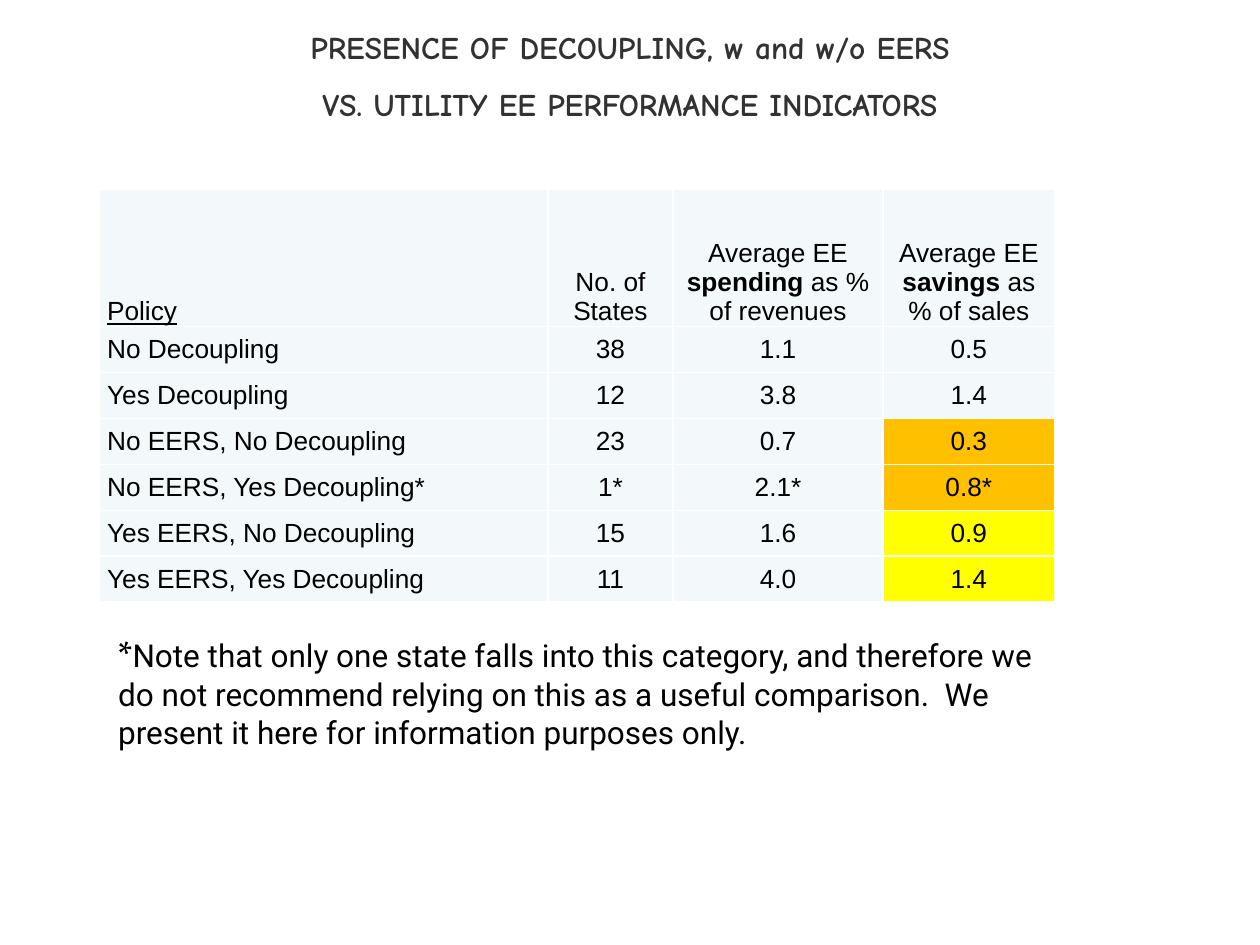
from dataclasses import dataclass

from lxml import etree
from pptx import Presentation
from pptx.dml.color import RGBColor
from pptx.enum.text import MSO_ANCHOR, MSO_AUTO_SIZE, PP_ALIGN
from pptx.oxml.ns import qn
from pptx.util import Inches, Pt

TOP, MIDDLE, BOTTOM = MSO_ANCHOR.TOP, MSO_ANCHOR.MIDDLE, MSO_ANCHOR.BOTTOM
LEFT, CENTER = PP_ALIGN.LEFT, PP_ALIGN.CENTER
NO_AUTOFIT = MSO_AUTO_SIZE.NONE
TITLE_ONLY = 5

COLORS = {
    "title": "323232",
    "text": "000000",
    "border": "FFFFFF",
    "cell": "F3F9FA",
    "without_eers": "FFC000",
    "with_eers": "FFFF00",
}
TITLE_FORMAT = {"name": "Comic Neue", "size": Pt(18), "bold": True}
TABLE_FORMAT = {"name": "Arial", "size": Pt(15), "bold": False}
NOTE_FORMAT = {"name": "Roboto", "size": Pt(18)}
ASTERISK_FORMAT = {"name": "TeX Gyre Pagella", "size": Pt(21)}


@dataclass
class Run:
    text: str
    format: dict


@dataclass
class PolicyRow:
    policy: str
    states: str
    spending: str
    savings: str
    savings_fill: str = "cell"


TITLE_LINES = [
    "PRESENCE OF DECOUPLING, w and w/o EERS",
    "VS. UTILITY EE PERFORMANCE INDICATORS",
]
BOLD = TABLE_FORMAT | {"bold": True}
HEADERS = [
    [Run("Policy", TABLE_FORMAT | {"underline": True})],
    [Run("No. of States", TABLE_FORMAT)],
    [Run("Average EE ", TABLE_FORMAT), Run("spending ", BOLD),
     Run("as % of revenues", TABLE_FORMAT)],
    [Run("Average EE ", TABLE_FORMAT), Run("savings", BOLD),
     Run(" as % of sales", TABLE_FORMAT)],
]
POLICY_ROWS = [
    PolicyRow("No Decoupling", "38", "1.1", "0.5"),
    PolicyRow("Yes Decoupling", "12", "3.8", "1.4"),
    PolicyRow("No EERS, No Decoupling", "23", "0.7", "0.3", "without_eers"),
    PolicyRow("No EERS, Yes Decoupling*", "1*", "2.1*", "0.8*", "without_eers"),
    PolicyRow("Yes EERS, No Decoupling", "15", "1.6", "0.9", "with_eers"),
    PolicyRow("Yes EERS, Yes Decoupling", "11", "4.0", "1.4", "with_eers"),
]
NOTE_RUNS = [
    Run("*", ASTERISK_FORMAT),
    Run("Note that only one state falls into this category, and therefore we do "
        "not recommend relying on this as a useful comparison.  We present it "
        "here for information purposes only.", NOTE_FORMAT),
]
COLUMN_WIDTHS = [3.56, 0.99, 1.67, 1.36]
HEADER_HEIGHT, ROW_HEIGHT = 1.09, 0.365


def add_runs(paragraph, runs: list[Run], color: str = "text") -> None:
    for item in runs:
        run = paragraph.add_run()
        run.text = item.text
        for attribute, value in item.format.items():
            setattr(run.font, attribute, value)
        run.font.color.rgb = RGBColor.from_string(COLORS[color])


def add_borders(cell) -> None:
    properties = cell._tc.get_or_add_tcPr()
    for position, side in enumerate(("a:lnL", "a:lnR", "a:lnT", "a:lnB")):
        line = etree.Element(qn(side), w=str(Pt(1)))
        fill = etree.SubElement(line, qn("a:solidFill"))
        etree.SubElement(fill, qn("a:srgbClr"), val=COLORS["border"])
        properties.insert(position, line)


def fill_cell(cell, runs: list[Run], fill: str, anchor, alignment) -> None:
    cell.margin_left = cell.margin_right = Inches(0.06)
    cell.margin_top = cell.margin_bottom = 0
    cell.vertical_anchor = anchor
    cell.fill.solid()
    cell.fill.fore_color.rgb = RGBColor.from_string(COLORS[fill])
    add_borders(cell)
    paragraph = cell.text_frame.paragraphs[0]
    paragraph.alignment = alignment
    add_runs(paragraph, runs)


def format_title(title) -> None:
    title.left, title.top = Inches(0.69), Inches(0.17)
    title.width, title.height = Inches(8.62), Inches(0.92)
    frame = title.text_frame
    frame.vertical_anchor = TOP
    frame.auto_size = NO_AUTOFIT
    for index, line in enumerate(TITLE_LINES):
        paragraph = frame.add_paragraph() if index else frame.paragraphs[0]
        paragraph.alignment = CENTER
        paragraph.space_before = Pt(11 if index else 0)
        add_runs(paragraph, [Run(line, TITLE_FORMAT)], "title")


def add_policy_table(slide) -> None:
    height = HEADER_HEIGHT + ROW_HEIGHT * len(POLICY_ROWS)
    table = slide.shapes.add_table(
        len(POLICY_ROWS) + 1, len(COLUMN_WIDTHS), Inches(0.79), Inches(1.5),
        Inches(sum(COLUMN_WIDTHS)), Inches(height)).table
    table.horz_banding = False
    table.first_row = False
    for column, width in zip(table.columns, COLUMN_WIDTHS):
        column.width = Inches(width)
    for index, row in enumerate(table.rows):
        row.height = Inches(ROW_HEIGHT if index else HEADER_HEIGHT)

    alignments = [LEFT, CENTER, CENTER, CENTER]
    for column, runs in enumerate(HEADERS):
        fill_cell(table.cell(0, column), runs, "cell", BOTTOM, alignments[column])
    for index, row in enumerate(POLICY_ROWS, start=1):
        texts = [row.policy, row.states, row.spending, row.savings]
        fills = ["cell", "cell", "cell", row.savings_fill]
        for column, (text, fill) in enumerate(zip(texts, fills)):
            fill_cell(table.cell(index, column), [Run(text, TABLE_FORMAT)],
                      fill, MIDDLE, alignments[column])


def add_note(slide) -> None:
    note = slide.shapes.add_textbox(
        Inches(0.84), Inches(4.96), Inches(7.53), Inches(1.06))
    note.text_frame.word_wrap = True
    paragraph = note.text_frame.paragraphs[0]
    paragraph.space_after = Pt(9)
    add_runs(paragraph, NOTE_RUNS)


def main() -> None:
    presentation = Presentation()
    presentation.slide_width, presentation.slide_height = Inches(10), Inches(7.5)
    slide = presentation.slides.add_slide(presentation.slide_layouts[TITLE_ONLY])
    # Title, table and footnote from top to bottom
    format_title(slide.shapes.title)
    add_policy_table(slide)
    add_note(slide)
    presentation.save("out.pptx")


if __name__ == "__main__":
    main()
